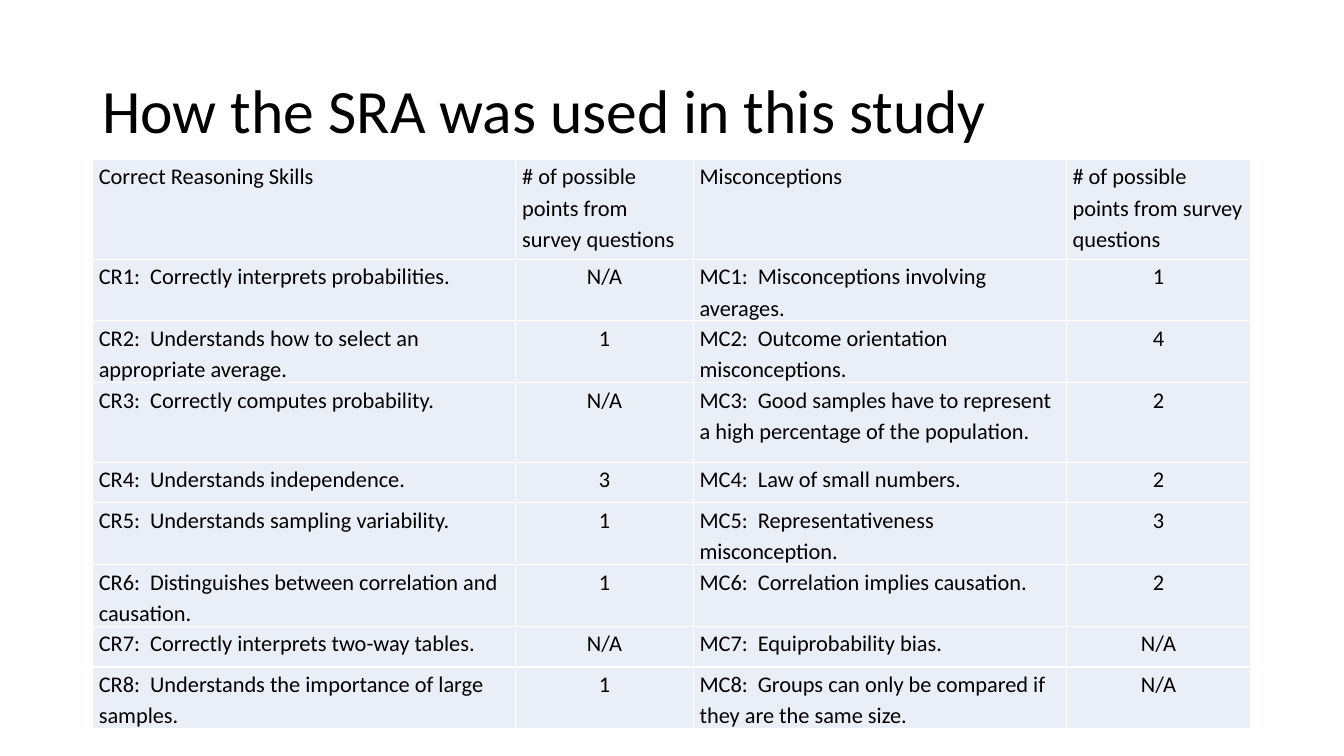
from pptx import Presentation
from pptx.dml.color import RGBColor
from pptx.enum.text import MSO_ANCHOR as Anchor, PP_ALIGN as Align
from pptx.util import Cm, Pt

FONT = "Calibri"
BLACK, PALE_BLUE = "000000", "EAEFF7"

POINTS_HEADING = "# of possible points from survey questions"
HEADINGS = ["Correct Reasoning Skills", POINTS_HEADING, "Misconceptions", POINTS_HEADING]

# Skill, its points, misconception, its points
SCALES = [
    ("Correctly interprets probabilities.", "N/A", "Misconceptions involving averages.", "1"),
    ("Understands how to select an appropriate average.", "1",
     "Outcome orientation misconceptions.", "4"),
    ("Correctly computes probability.", "N/A",
     "Good samples have to represent a high percentage of the population.", "2"),
    ("Understands independence.", "3", "Law of small numbers.", "2"),
    ("Understands sampling variability.", "1", "Representativeness misconception.", "3"),
    ("Distinguishes between correlation and causation.", "1",
     "Correlation implies causation.", "2"),
    ("Correctly interprets two-way tables.", "N/A", "Equiprobability bias.", "N/A"),
    ("Understands the importance of large samples.", "1",
     "Groups can only be compared if they are the same size.", "N/A"),
]
COLUMN_WIDTHS = [10.67, 4.47, 9.4, 4.65]
ROW_HEIGHTS = [2.51, 1.02, 1.02, 2.01, 1.02, 1.02, 1.02, 1.02, 1.5]


def color(hex_string):
    return RGBColor.from_string(hex_string)


def style_paragraph(paragraph, size, line_spacing, align=Align.LEFT):
    paragraph.alignment = align
    paragraph.line_spacing = line_spacing
    paragraph.font.name = FONT
    paragraph.font.size = Pt(size)
    paragraph.font.color.rgb = color(BLACK)


def add_title(slide, left, top, width, height):
    title = slide.shapes.add_textbox(Cm(left), Cm(top), Cm(width), Cm(height)).text_frame
    title.word_wrap = True
    title.vertical_anchor = Anchor.MIDDLE
    title.text = "How the SRA was used in this study"
    style_paragraph(title.paragraphs[0], 44, 0.9)


def fill_cell(cell, text, align):
    cell.text = text
    cell.margin_left = cell.margin_right = Cm(0.16)
    cell.margin_top = cell.margin_bottom = 0
    cell.fill.solid()
    cell.fill.fore_color.rgb = color(PALE_BLUE)
    style_paragraph(cell.text_frame.paragraphs[0], 16, 1.15, align)


def add_scales_table(slide, left, top):
    rows = [HEADINGS] + [
        (f"CR{number}:  {skill}", skill_points, f"MC{number}:  {misconception}", error_points)
        for number, (skill, skill_points, misconception, error_points) in enumerate(SCALES, 1)
    ]
    scales = slide.shapes.add_table(
        len(rows), len(HEADINGS), Cm(left), Cm(top),
        Cm(sum(COLUMN_WIDTHS)), Cm(sum(ROW_HEIGHTS))).table
    # Plain table style keeps its thin white grid
    scales.first_row = scales.horz_banding = False
    for column, width in zip(scales.columns, COLUMN_WIDTHS):
        column.width = Cm(width)
    for row, height in zip(scales.rows, ROW_HEIGHTS):
        row.height = Cm(height)

    # Points are centred below the heading row
    for r, texts in enumerate(rows):
        for c, text in enumerate(texts):
            is_points = r > 0 and c % 2 == 1
            fill_cell(scales.cell(r, c), text, Align.CENTER if is_points else Align.LEFT)


def main():
    presentation = Presentation()
    presentation.slide_width, presentation.slide_height = Cm(33.87), Cm(19.05)
    slide = presentation.slides.add_slide(presentation.slide_layouts[6])
    add_title(slide, 2.33, 1.01, 29.21, 3.68)
    add_scales_table(slide, 2.33, 4.02)
    presentation.save("out.pptx")


if __name__ == "__main__":
    main()
